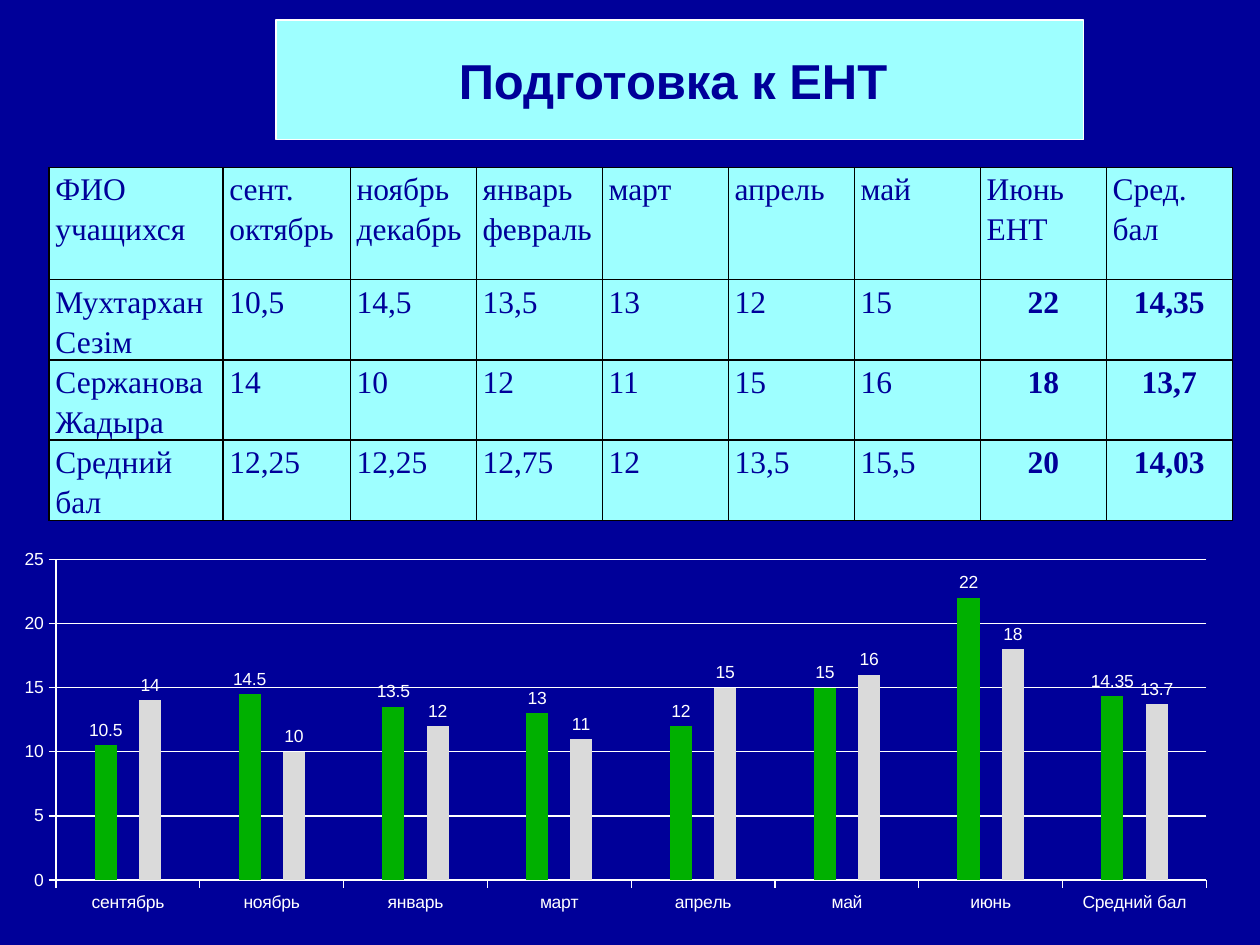
from lxml import etree
from pptx import Presentation
from pptx.chart.data import CategoryChartData
from pptx.dml.color import RGBColor
from pptx.enum.chart import XL_CHART_TYPE, XL_LABEL_POSITION, XL_TICK_MARK
from pptx.enum.shapes import MSO_SHAPE
from pptx.enum.text import MSO_ANCHOR, PP_ALIGN
from pptx.oxml.ns import qn
from pptx.util import Inches, Pt

COLUMNS = XL_CHART_TYPE.COLUMN_CLUSTERED
ABOVE = XL_LABEL_POSITION.OUTSIDE_END
OUT = XL_TICK_MARK.OUTSIDE
RECT = MSO_SHAPE.RECTANGLE
MIDDLE = MSO_ANCHOR.MIDDLE
LEFT, CENTER = PP_ALIGN.LEFT, PP_ALIGN.CENTER

COLORS = {"navy": "000099", "aqua": "9EFFFF", "white": "FFFFFF", "black": "000000",
          "blue": "3366CC", "green": "00B000", "mauve": "AAAACA",
          "gray": "DADADA", "pale": "ADB8E2"}

WIDTHS = [1.38, 1.01] + [1] * 7
HEIGHTS = [0.89] + [0.59] * 3
ROWS = [
    ["ФИО учащихся", "сент.\nоктябрь", "ноябрь\nдекабрь", "январь\nфевраль", "март",
     "апрель", "май", "Июнь\nЕНТ", "Сред. бал"],
    ["Мухтархан Сезім", "10,5", "14,5", "13,5", "13", "12", "15", "22", "14,35"],
    ["Сержанова Жадыра", "14", "10", "12", "11", "15", "16", "18", "13,7"],
    ["Средний бал", "12,25", "12,25", "12,75", "12", "13,5", "15,5", "20", "14,03"],
]
BOLD_FROM = 7

MONTHS = ["сентябрь", "ноябрь", "январь", "март", "апрель", "май", "июнь", "Средний бал"]
EMPTY = [None] * len(MONTHS)
SERIES = [
    ("blue", EMPTY),
    ("green", [10.5, 14.5, 13.5, 13, 12, 15, 22, 14.35]),
    ("mauve", EMPTY),
    ("gray", [14, 10, 12, 11, 15, 16, 18, 13.7]),
    ("pale", EMPTY),
]


def rgb(name):
    return RGBColor.from_string(COLORS[name])


def paint(fill, name):
    fill.solid()
    fill.fore_color.rgb = rgb(name)


def style(font, face, size, color, bold=False):
    font.name, font.size, font.bold = face, Pt(size), bold
    font.color.rgb = rgb(color)


def add_title(slide, box):
    shape = slide.shapes.add_shape(RECT, *box)
    shape.shadow.inherit = False
    paint(shape.fill, "aqua")
    shape.line.color.rgb = rgb("white")
    shape.line.width = Pt(0.75)
    frame = shape.text_frame
    frame.word_wrap = False
    frame.vertical_anchor = MIDDLE
    frame.text = "Подготовка к ЕНТ "
    para = frame.paragraphs[0]
    para.alignment = CENTER
    style(para.runs[0].font, "Arial", 28, "navy", True)


def add_borders(cell):
    props = cell._tc.get_or_add_tcPr()
    for i, side in enumerate(("lnL", "lnR", "lnT", "lnB")):
        line = etree.Element(qn("a:" + side), w=str(Pt(1)))
        fill = etree.SubElement(line, qn("a:solidFill"))
        etree.SubElement(fill, qn("a:srgbClr"), val=COLORS["black"])
        props.insert(i, line)


def fill_cell(cell, text, strong):
    cell.margin_left = cell.margin_right = Inches(0.05)
    cell.margin_top = cell.margin_bottom = 0
    paint(cell.fill, "aqua")
    add_borders(cell)
    cell.text_frame.text = text
    for para in cell.text_frame.paragraphs:
        para.line_spacing = 1.15
        para.alignment = CENTER if strong else LEFT
        style(para.runs[0].font, "Times New Roman", 18, "navy", strong)


def add_scores(slide, box):
    table = slide.shapes.add_table(len(ROWS), len(WIDTHS), *box).table
    for col, width in zip(table.columns, WIDTHS):
        col.width = Inches(width)
    for r, (row, height) in enumerate(zip(ROWS, HEIGHTS)):
        table.rows[r].height = Inches(height)
        for c, text in enumerate(row):
            fill_cell(table.cell(r, c), text, r > 0 and c >= BOLD_FROM)


def add_bars(slide, box):
    data = CategoryChartData()
    data.categories = MONTHS
    for i, (_, values) in enumerate(SERIES, 1):
        data.add_series(f"Series {i}", values)
    chart = slide.shapes.add_chart(COLUMNS, *box, data).chart
    chart.has_legend = chart.has_title = False
    style(chart.font, "Arial", 10, "white")

    plot = chart.plots[0]
    plot.gap_width, plot.overlap = 150, 0
    plot.vary_by_categories = False
    for bar, (color, values) in zip(plot.series, SERIES):
        paint(bar.format.fill, color)
        if values is not EMPTY:
            labels = bar.data_labels
            labels.show_value = True
            labels.position = ABOVE
            style(labels.font, "Arial", 10, "white")

    scale = chart.value_axis
    scale.minimum_scale, scale.maximum_scale, scale.major_unit = 0, 25, 5
    scale.has_major_gridlines = True
    scale.major_gridlines.format.line.color.rgb = rgb("white")
    for axis in (chart.category_axis, scale):
        axis.major_tick_mark = OUT
        axis.format.line.color.rgb = rgb("white")


def main():
    deck = Presentation()
    deck.slide_width, deck.slide_height = Inches(10), Inches(7.5)
    slide = deck.slides.add_slide(deck.slide_layouts[6])
    paint(slide.background.fill, "navy")
    add_title(slide, [Inches(v) for v in (2.19, 0.16, 6.41, 0.95)])
    add_scores(slide, [Inches(v) for v in (0.39, 1.33, sum(WIDTHS), sum(HEIGHTS))])
    add_bars(slide, [Inches(v) for v in (0, 4.3, 9.77, 3)])
    deck.save("out.pptx")


if __name__ == "__main__":
    main()
